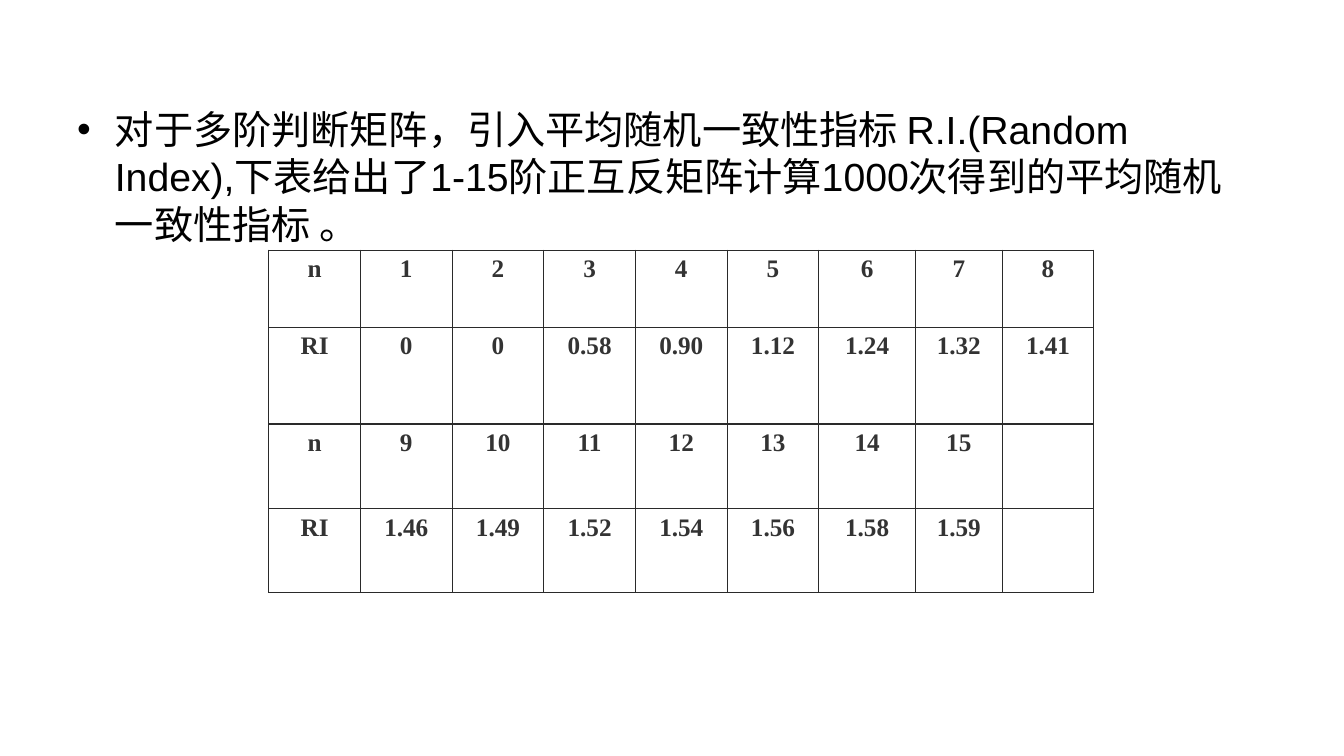
from dataclasses import dataclass

from lxml import etree
from pptx import Presentation
from pptx.dml.color import RGBColor
from pptx.enum import text
from pptx.oxml import ns
from pptx.util import Pt


@dataclass(frozen=True)
class Theme:
    body_font: str = "Arial"
    body_size: int = 28
    body_color: str = "000000"
    table_font: str = "Times New Roman"
    table_size: int = 18
    table_color: str = "333333"
    border_color: str = "2A2A2A"
    border_width: int = 1


def style_font(font, name, size, color, bold=False):
    font.name = name
    font.size = Pt(size)
    font.bold = bold
    font.color.rgb = RGBColor.from_string(color)


def add_borders(cell, color, width):
    """Draw all four cell edges; edges must precede the fill in the XML."""
    properties = cell._tc.get_or_add_tcPr()
    for position, edge in enumerate(("a:lnL", "a:lnR", "a:lnT", "a:lnB")):
        line = etree.Element(ns.qn(edge), w=str(Pt(width)))
        fill = etree.SubElement(line, ns.qn("a:solidFill"))
        etree.SubElement(fill, ns.qn("a:srgbClr"), val=color)
        properties.insert(position, line)


theme = Theme()
presentation = Presentation()
presentation.slide_width = Pt(960)
presentation.slide_height = Pt(540)
slide = presentation.slides.add_slide(presentation.slide_layouts[6])

# Introduction
introduction = slide.shapes.add_textbox(Pt(48), Pt(72), Pt(864), Pt(410.4))
frame = introduction.text_frame
frame.word_wrap = True
frame.margin_right = Pt(14)
paragraph = frame.paragraphs[0]
paragraph.text = (
    "对于多阶判断矩阵，引入平均随机一致性指标 R.I.(Random Index),"
    "下表给出了1-15阶正互反矩阵计算1000次得到的平均随机一致性指标 。"
)
paragraph_properties = paragraph._p.get_or_add_pPr()
paragraph_properties.set("marL", str(Pt(27)))
paragraph_properties.set("indent", str(Pt(-27)))
etree.SubElement(paragraph_properties, ns.qn("a:buFont"), typeface=theme.body_font)
etree.SubElement(paragraph_properties, ns.qn("a:buChar"), char="•")
style_font(paragraph.font, theme.body_font, theme.body_size, theme.body_color)

# Random index table
index_rows = [
    ["n", "1", "2", "3", "4", "5", "6", "7", "8"],
    ["RI", "0", "0", "0.58", "0.90", "1.12", "1.24", "1.32", "1.41"],
    ["n", "9", "10", "11", "12", "13", "14", "15", ""],
    ["RI", "1.46", "1.49", "1.52", "1.54", "1.56", "1.58", "1.59", ""],
]
column_widths = [65.5] * 6 + [69, 62, 65.5]
row_heights = [55, 69, 60.5, 60]

table = slide.shapes.add_table(
    len(row_heights), len(column_widths), Pt(192), Pt(178.8),
    Pt(sum(column_widths)), Pt(sum(row_heights)),
).table
table.first_row = False
table.horz_banding = False
for column, width in zip(table.columns, column_widths):
    column.width = Pt(width)

for row, height, values in zip(table.rows, row_heights, index_rows):
    row.height = Pt(height)
    for cell, value in zip(row.cells, values):
        cell.fill.background()
        add_borders(cell, theme.border_color, theme.border_width)
        paragraph = cell.text_frame.paragraphs[0]
        paragraph.text = value
        paragraph.alignment = text.PP_ALIGN.CENTER
        style_font(paragraph.font, theme.table_font, theme.table_size,
                   theme.table_color, bold=True)

presentation.save("out.pptx")
